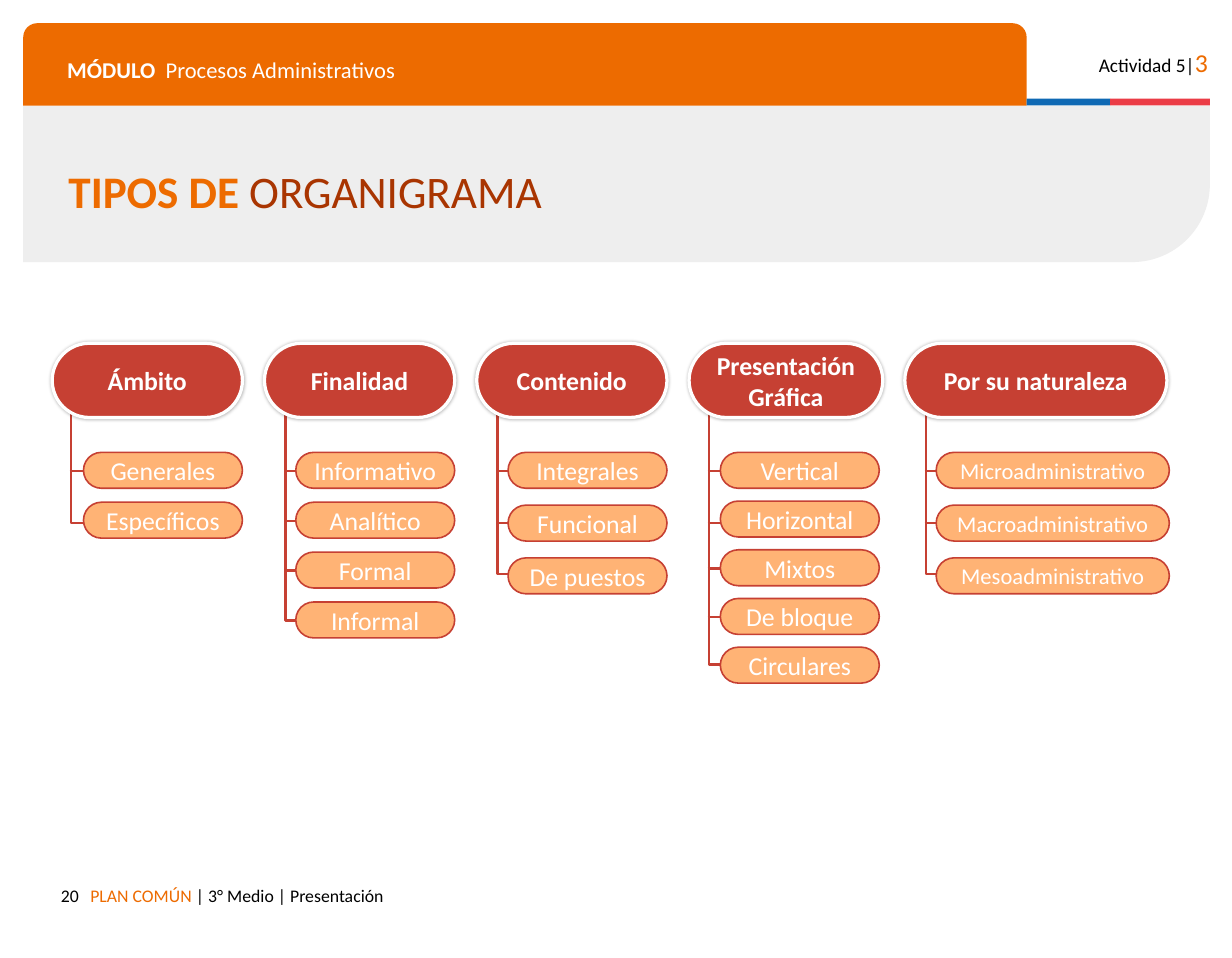
from math import cos, pi, sin

from lxml.etree import SubElement
from pptx import Presentation
from pptx.dml.color import RGBColor as RGB
from pptx.enum.shapes import MSO_CONNECTOR as LINK, MSO_SHAPE as SHAPE
from pptx.enum.text import MSO_ANCHOR as ANCHOR, MSO_AUTO_SIZE as AUTO, PP_ALIGN as ALIGN
from pptx.oxml.ns import qn
from pptx.util import Inches, Pt

HUES = {
    "orange": "ED6B00", "rust": "A93501", "red": "C64033", "peach": "FFB375",
    "blue": "0F69B4", "pink": "EB3C46", "gray": "EEEEEE",
    "white": "FFFFFF", "black": "000000",
}

deck = Presentation()
deck.slide_width, deck.slide_height = Inches(10.62), Inches(8.26)
slide = deck.slides.add_slide(deck.slide_layouts[5])
shapes = slide.shapes


def paint(shape, fill=None, line=None, width=1):
    shape.shadow.inherit = False
    for part, hue in ((shape.fill, fill), (shape.line.fill, line)):
        if hue:
            part.solid()
            part.fore_color.rgb = RGB.from_string(HUES[hue])
        else:
            part.background()
    if line:
        shape.line.width = Pt(width)


def write(shape, runs, align=ALIGN.LEFT, anchor=ANCHOR.TOP, pad=(0.1, 0.1)):
    frame = shape.text_frame
    frame.word_wrap, frame.auto_size = True, AUTO.NONE
    frame.vertical_anchor = anchor
    frame.margin_left = frame.margin_right = Inches(pad[0])
    frame.margin_top = frame.margin_bottom = Inches(pad[1])
    para = frame.paragraphs[0]
    para.alignment = align
    for text, size, hue, bold in runs:
        run = para.add_run()
        run.text = text
        font = run.font
        font.name, font.size, font.bold = "Calibri", Pt(size), bold
        font.color.rgb = RGB.from_string(HUES[hue])
    return para


# Gray band with a rounded lower right corner
curve = [(9.76 + 0.67 * sin(a), 1.59 + 0.67 * cos(a))
         for a in (pi / 2 * i / 24 for i in range(25))]
pen = shapes.build_freeform(Inches(0.2), Inches(0.91))
pen.add_line_segments([(Inches(x), Inches(y)) for x, y in
                       [(0.2, 2.26), *curve, (10.43, 0.91)]])
paint(pen.convert_to_shape(), "gray")

# Orange header and the two stripes beside it
header = shapes.add_shape(SHAPE.ROUND_2_SAME_RECTANGLE,
                          Inches(0.2), Inches(0.2), Inches(8.65), Inches(0.71))
header.adjustments[0] = 0.17
paint(header, "orange")
for left, width, hue in ((8.85, 0.72, "blue"), (9.57, 0.86, "pink")):
    stripe = shapes.add_shape(SHAPE.RECTANGLE, Inches(left), Inches(0.85),
                              Inches(width), Inches(0.06))
    paint(stripe, hue)

# Header and footer labels
labels = [
    (9.23, 0.3, 1.28, 0.43, ALIGN.RIGHT,
     [("Actividad 5|", 12, "black", False), ("3", 16, "orange", False)]),
    (0.68, 7.53, 7.15, 0.35, ALIGN.LEFT,
     [("PLAN COMÚN ", 11, "orange", False),
      ("| 3° Medio | Presentación", 11, "black", False)]),
    (0.41, 7.53, 0.37, 0.35, ALIGN.RIGHT, [("20", 11, "black", False)]),
]
for left, top, width, height, align, runs in labels:
    box = shapes.add_textbox(Inches(left), Inches(top), Inches(width), Inches(height))
    write(box, runs, align)

# Module name, set off by a tab stop
box = shapes.add_textbox(Inches(0.48), Inches(0.38), Inches(8.14), Inches(0.41))
para = box.text_frame.paragraphs[0]
tabs = SubElement(para._p.get_or_add_pPr(), qn("a:tabLst"))
SubElement(tabs, qn("a:tab"), pos=str(Inches(0.85)), algn="l")
write(box, [("MÓDULO", 14, "white", True),
            ("\tProcesos Administrativos", 14, "white", False)])

# Title, brought in front of the band
title = shapes.title
title.left, title.top = Inches(0.49), Inches(1.39)
title.width, title.height = Inches(6.62), Inches(0.59)
para = write(title, [("TIPOS DE ", 28, "orange", True),
                     ("ORGANIGRAMA", 28, "rust", False)], anchor=ANCHOR.MIDDLE)
para.line_spacing = 0.8
title.element.getparent().append(title.element)

# Columns: head, left, width, trunk, pill width, pitch, size, branch heights, items
columns = [
    ("Ámbito", 0.45, 1.64, 0.61, 1.37, 0.43, 16, (4.06, 4.51),
     ("Generales", "Específicos")),
    ("Finalidad", 2.28, 1.64, 2.46, 1.37, 0.43, 16, (4.06, 4.49, 4.92, 5.35),
     ("Informativo", "Analítico", "Formal", "Informal")),
    ("Contenido", 4.11, 1.64, 4.29, 1.37, 0.455, 16, (4.06, 4.51, 4.95),
     ("Integrales", "Funcional", "De puestos")),
    ("Presentación Gráfica", 5.94, 1.67, 6.11, 1.37, 0.42, 16,
     (4.06, 4.51, 4.9, 5.32, 5.73),
     ("Vertical", "Horizontal", "Mixtos", "De bloque", "Circulares")),
    ("Por su naturaleza", 7.8, 2.26, 7.98, 2.01, 0.455, 14, (4.06, 4.51, 4.95),
     ("Microadministrativo", "Macroadministrativo", "Mesoadministrativo")),
]
for name, left, width, trunk, wide, pitch, size, levels, items in columns:
    # Trunk ends in the lowest branch
    pen = shapes.build_freeform(Inches(trunk), Inches(3.42))
    pen.add_line_segments([(Inches(trunk), Inches(levels[-1])),
                           (Inches(trunk + 0.85), Inches(levels[-1]))], close=False)
    paint(pen.convert_to_shape(), line="red", width=1.5)
    for level in levels[:-1]:
        branch = shapes.add_connector(LINK.STRAIGHT, Inches(trunk - 0.01), Inches(level),
                                      Inches(trunk + 0.79), Inches(level))
        branch.line.color.rgb = RGB.from_string(HUES["red"])
        branch.line.width = Pt(1.5)
        SubElement(branch._element.spPr, qn("a:effectLst"))

    # Heading with a soft shadow
    head = shapes.add_shape(SHAPE.ROUNDED_RECTANGLE, Inches(left), Inches(2.96),
                            Inches(width), Inches(0.64))
    head.adjustments[0] = 0.5
    paint(head, "red", "white", 2)
    glow = SubElement(head._element.spPr.find(qn("a:effectLst")), qn("a:outerShdw"),
                      blurRad=str(Pt(2)), dist="0", dir="0", rotWithShape="0")
    tint = SubElement(glow, qn("a:srgbClr"), val=HUES["black"])
    SubElement(tint, qn("a:alpha"), val="28000")
    write(head, [(name, 16, "white", True)], ALIGN.CENTER, ANCHOR.MIDDLE, (0.1, 0))

    # Pills
    for row, item in enumerate(items):
        pill = shapes.add_shape(SHAPE.ROUNDED_RECTANGLE, Inches(left + 0.27),
                                Inches(3.9 + row * pitch), Inches(wide), Inches(0.31))
        pill.adjustments[0] = 0.5
        paint(pill, "peach", "red")
        write(pill, [(item, size, "white", False)], ALIGN.CENTER, ANCHOR.MIDDLE, (0, 0))

deck.save("out.pptx")
